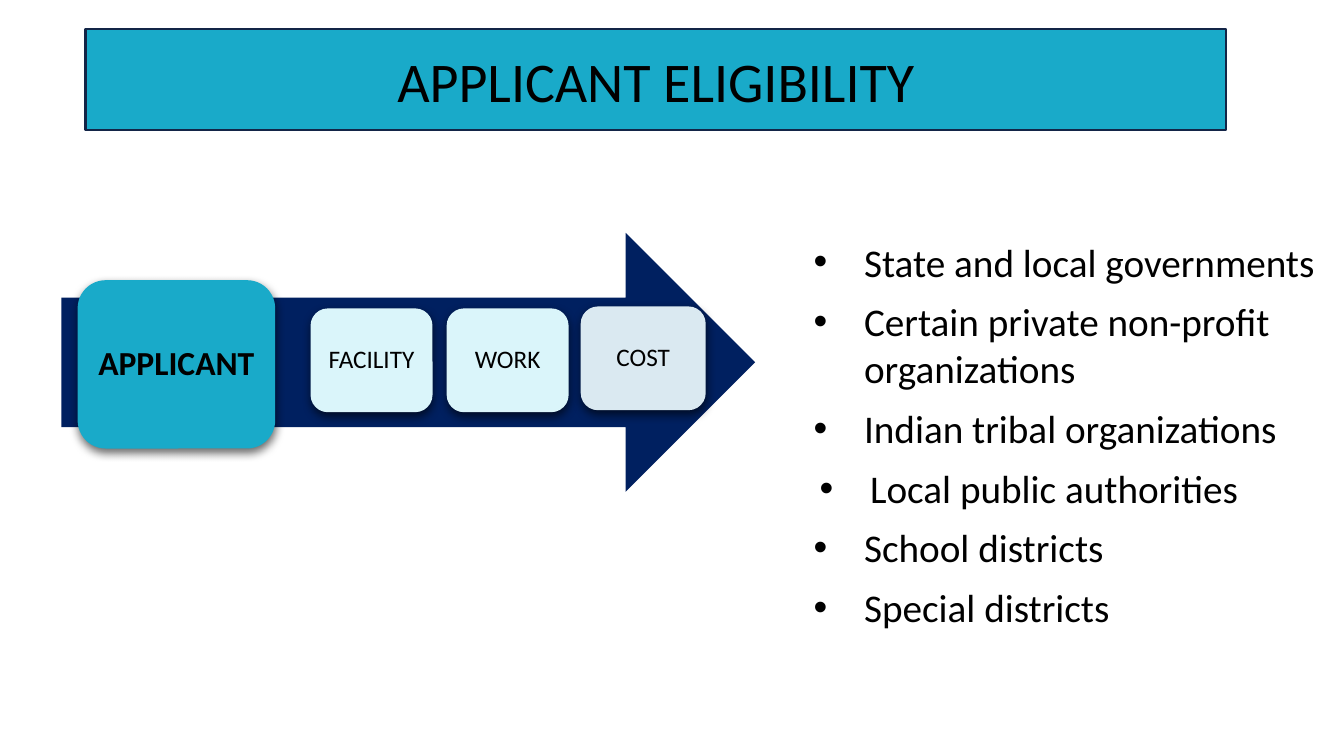
from lxml.etree import SubElement
from pptx import Presentation
from pptx.dml.color import RGBColor
from pptx.enum.shapes import MSO_SHAPE
from pptx.enum.text import MSO_ANCHOR, MSO_AUTO_SIZE, PP_ALIGN
from pptx.oxml import parse_xml
from pptx.oxml.ns import nsdecls, qn
from pptx.util import Inches, Pt

TEAL, NAVY, OUTLINE, BLACK = "19AAC9", "002060", "132547", "000000"
PALE, GREY = "DAF5FA", "DAE9F1"
SHADOW = (
    f'<a:effectLst {nsdecls("a")}><a:outerShdw blurRad="90000" dist="39000" '
    'dir="5040000" rotWithShape="0"><a:srgbClr val="000000">'
    '<a:alpha val="60000"/></a:srgbClr></a:outerShdw></a:effectLst>'
)


def color(value):
    return RGBColor.from_string(value)


class SlideBuilder:
    """Holds the slide and its text style, and adds each kind of element."""

    def __init__(self, s, font="Calibri"):
        self.s = s
        self.font = font

    def place(self, sp, box):
        sp.left, sp.top, sp.width, sp.height = (Inches(v) for v in box)

    def format(self, p, size, bold=False):
        for r in p.runs:
            r.font.name = self.font
            r.font.size = Pt(size)
            r.font.bold = bold
            r.font.color.rgb = color(BLACK)

    def title(self, text, box):
        sp = self.s.shapes.title
        self.place(sp, box)
        sp.fill.solid()
        sp.fill.fore_color.rgb = color(TEAL)
        sp.line.color.rgb = color(OUTLINE)
        sp.line.width = Pt(1.75)
        tf = sp.text_frame
        tf.text = text
        tf.vertical_anchor = MSO_ANCHOR.MIDDLE
        tf.paragraphs[0].alignment = PP_ALIGN.CENTER
        self.format(tf.paragraphs[0], 40)

    def bullets(self, items, box):
        sp = self.s.placeholders[1]
        self.place(sp, box)
        tf = sp.text_frame
        tf.text = "\n".join(text for text, level, margin in items)
        tf.auto_size = MSO_AUTO_SIZE.SHAPE_TO_FIT_TEXT
        for p, (text, level, margin) in zip(tf.paragraphs, items):
            p.level = level
            p.space_before = Pt(0)
            p.space_after = Pt(9)
            pPr = p._p.get_or_add_pPr()
            pPr.set("marL", str(Inches(margin)))
            pPr.set("indent", str(Inches(-0.5)))
            SubElement(pPr, qn("a:buFont")).set("typeface", "Arial")
            SubElement(pPr, qn("a:buChar")).set("char", "•")
            self.format(p, 28)

    def shape(self, kind, box, fill):
        sp = self.s.shapes.add_shape(kind, *(Inches(v) for v in box))
        sp.shadow.inherit = False
        sp.fill.solid()
        sp.fill.fore_color.rgb = color(fill)
        sp.line.fill.background()
        return sp

    def card(self, text, box, fill, size=18, bold=False):
        sp = self.shape(MSO_SHAPE.ROUNDED_RECTANGLE, box, fill)
        spPr = sp._element.spPr
        spPr.replace(spPr.find(qn("a:effectLst")), parse_xml(SHADOW))
        tf = sp.text_frame
        tf.text = text
        tf.word_wrap = True
        tf.vertical_anchor = MSO_ANCHOR.MIDDLE
        tf.margin_left = tf.margin_right = Inches(0.1)
        p = tf.paragraphs[0]
        p.alignment = PP_ALIGN.CENTER
        p.line_spacing = 0.9
        self.format(p, size, bold)


def main():
    prs = Presentation()
    prs.slide_width, prs.slide_height = Inches(13.33), Inches(7.5)
    slide = SlideBuilder(prs.slides.add_slide(prs.slide_layouts[1]))
    slide.title("APPLICANT ELIGIBILITY", (0.85, 0.29, 11.31, 1))
    slide.bullets([
        ("State and local governments", 0, 0.5),
        ("Certain private non-profit organizations", 0, 0.5),
        ("Indian tribal organizations", 0, 0.5),
        ("Local public authorities", 1, 0.56),
        ("School districts", 1, 0.5),
        ("Special districts", 1, 0.5),
    ], (7.97, 2.31, 6.1, 4.07))
    slide.shape(MSO_SHAPE.RIGHT_ARROW, (0.61, 2.31, 6.88, 2.57), NAVY)
    slide.card("APPLICANT", (0.77, 2.78, 1.96, 1.67), TEAL, 24, True)
    for i, text in enumerate(("FACILITY", "WORK")):
        slide.card(text, (3.08 + 1.35 * i, 3.06, 1.21, 1.03), PALE)
    slide.card("COST", (5.76, 3.04, 1.24, 1.03), GREY)
    prs.save("out.pptx")


if __name__ == "__main__":
    main()
